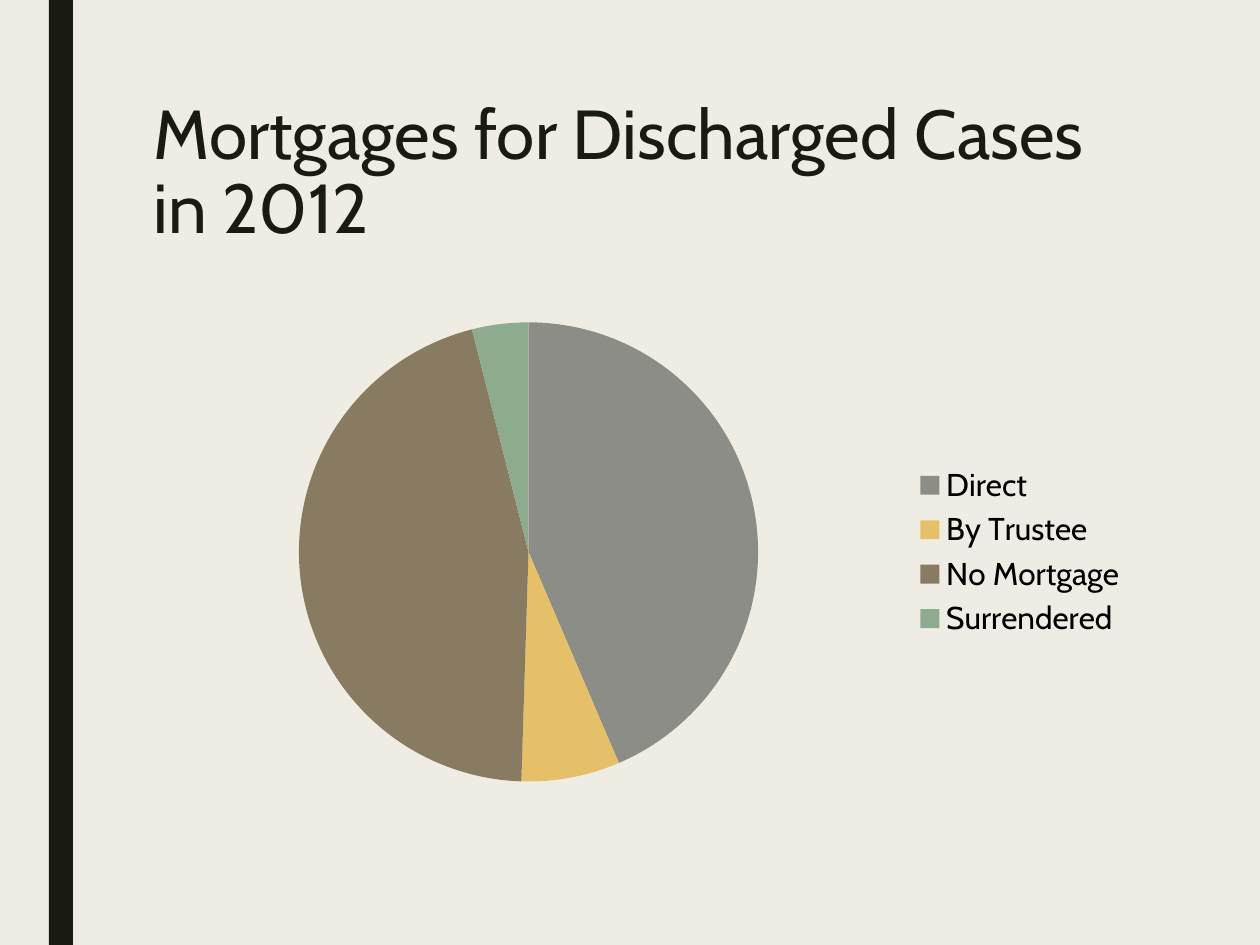
"""Build a slide with a pie chart of mortgages for discharged cases."""
from dataclasses import dataclass

from pptx import Presentation
from pptx.chart.data import CategoryChartData
from pptx.dml.color import RGBColor
from pptx.enum.chart import XL_CHART_TYPE, XL_LEGEND_POSITION
from pptx.enum.shapes import MSO_SHAPE
from pptx.enum.text import MSO_ANCHOR, MSO_AUTO_SIZE, PP_ALIGN
from pptx.util import Pt

PIE = XL_CHART_TYPE.PIE
RIGHT = XL_LEGEND_POSITION.RIGHT
RECT = MSO_SHAPE.RECTANGLE
TOP = MSO_ANCHOR.TOP
LEFT = PP_ALIGN.LEFT
FIXED = MSO_AUTO_SIZE.NONE
TITLE_ONLY = 5
SCALE = 914400 / 126


@dataclass(frozen=True)
class Theme:
    paper: str = "EFEDE3"
    ink: str = "191B0E"
    label: str = "000000"
    face: str = "Cabin"
    head: float = 39.6
    body: float = 18


def emu(*sizes):
    return [round(size * SCALE) for size in sizes]


def paint(fill, color):
    fill.solid()
    fill.fore_color.rgb = RGBColor.from_string(color)


def style(font, face, size, color):
    font.name = face
    font.size = Pt(size)
    font.color.rgb = RGBColor.from_string(color)


def write(frame, text, *, face, size, color, align=LEFT, space=1.0):
    frame.word_wrap = True
    frame.auto_size = FIXED
    frame.vertical_anchor = TOP
    para = frame.paragraphs[0]
    para.alignment = align
    para.line_spacing = space
    run = para.add_run()
    run.text = text
    style(run.font, face, size, color)


class Page:
    def __init__(self, deck, theme):
        self.theme = theme
        self.slide = deck.slides.add_slide(deck.slide_layouts[TITLE_ONLY])
        paint(self.slide.background.fill, theme.paper)

    def bar(self, *box):
        shape = self.slide.shapes.add_shape(RECT, *emu(*box))
        shape.shadow.inherit = False
        paint(shape.fill, self.theme.ink)
        shape.line.fill.background()

    def title(self, text, *box):
        shape = self.slide.shapes.title
        shape.left, shape.top, shape.width, shape.height = emu(*box)
        theme = self.theme
        write(shape.text_frame, text, face=theme.face, size=theme.head,
              color=theme.ink, space=0.89)

    def pie(self, name, parts, *box):
        data = CategoryChartData()
        data.categories = [label for label, _, _ in parts]
        data.add_series(name, [value for _, value, _ in parts])
        chart = self.slide.shapes.add_chart(PIE, *emu(*box), data).chart
        theme = self.theme
        style(chart.font, theme.face, theme.body, theme.label)
        chart.has_title = False
        chart.has_legend = True
        chart.legend.position = RIGHT
        chart.legend.include_in_layout = False
        plot = chart.plots[0]
        plot.vary_by_categories = True
        for index, (_, _, color) in enumerate(parts):
            paint(plot.series[0].points[index].format.fill, color)


def main():
    deck = Presentation()
    deck.slide_width, deck.slide_height = emu(1260, 945)
    page = Page(deck, Theme())
    page.bar(49, 0, 24, 945)
    page.title("Mortgages for Discharged Cases in 2012", 141, 94, 993, 204)
    parts = [
        ("Direct", 44, "8C8D86"),
        ("By Trustee", 7, "E6C069"),
        ("No Mortgage", 46, "897B61"),
        ("Surrendered", 4, "8DAB8E"),
    ]
    page.pie("Series 1", parts, 147, 305, 993, 494)
    deck.save("out.pptx")


if __name__ == "__main__":
    main()
